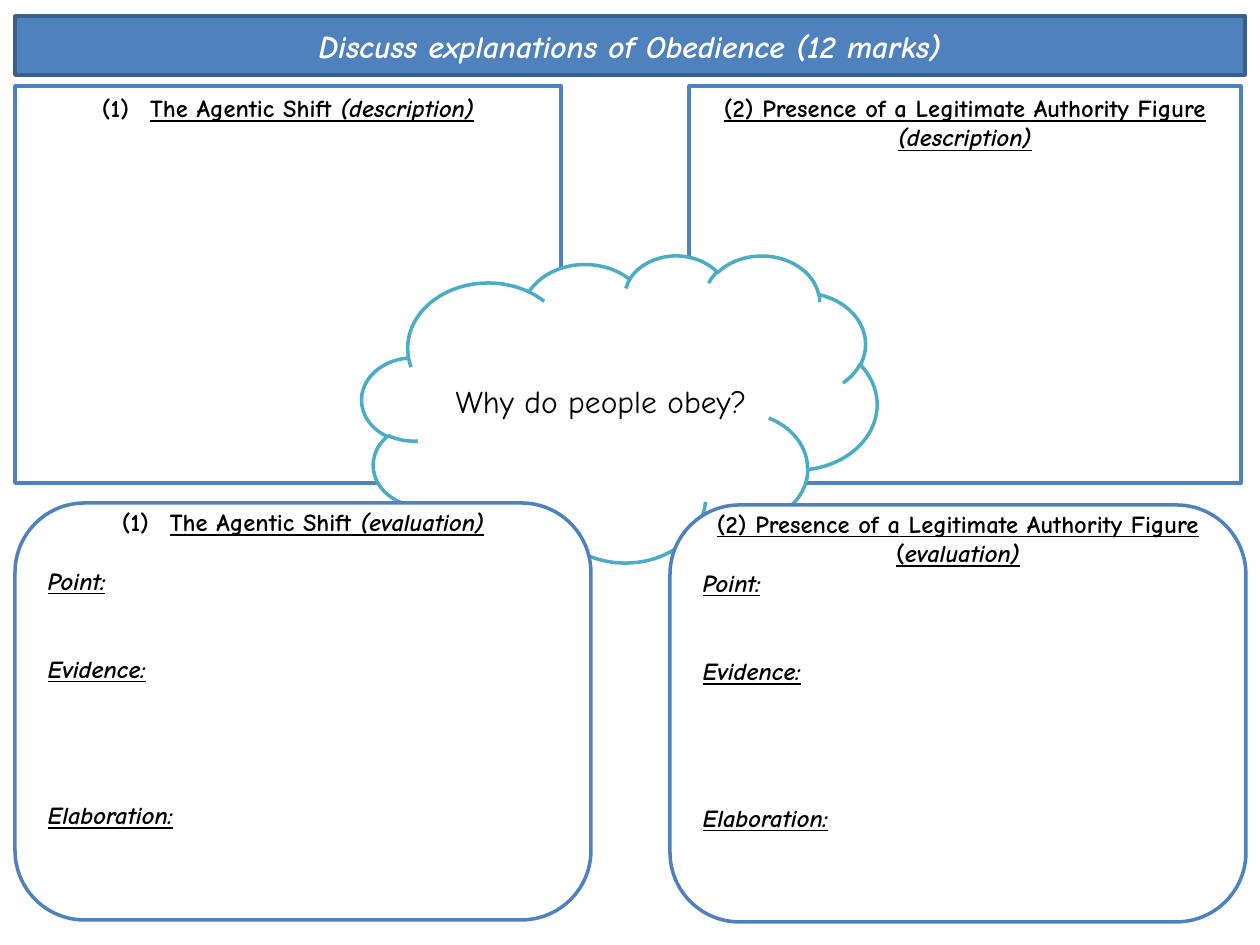
from dataclasses import dataclass

from lxml.etree import SubElement
from pptx import Presentation
from pptx.dml.color import RGBColor
from pptx.enum.shapes import MSO_SHAPE
from pptx.enum.text import MSO_ANCHOR, MSO_AUTO_SIZE, PP_ALIGN
from pptx.oxml.ns import qn
from pptx.util import Emu, Pt

EMU_PER_PX = 914400 / 126
FONT = "Comic Neue"
COLORS = {
    "blue": "4F81BD",
    "navy": "3A5F8C",
    "teal": "4BACC6",
    "white": "FFFFFF",
    "black": "000000",
}


@dataclass(frozen=True)
class Panel:
    left: int
    top: int
    width: int
    height: int
    heading: str
    ending: str
    numbered: bool = False
    prompt_gap: int | None = None


PANELS = [
    Panel(15, 86, 546, 397, "The Agentic Shift ", "(description)", numbered=True),
    Panel(689, 86, 552, 397, "(2) Presence of a Legitimate Authority Figure", " (description)"),
]
EVALUATIONS = [
    Panel(15, 503, 576, 417, "The Agentic Shift ", "(evaluation)", numbered=True, prompt_gap=29),
    Panel(670, 505, 576, 417, "(2) Presence of a Legitimate Authority Figure (", "evaluation)", prompt_gap=0),
]


def px(n: int) -> Emu:
    return Emu(round(n * EMU_PER_PX))


def rgb(name: str) -> RGBColor:
    return RGBColor.from_string(COLORS[name])


def add_run(p, text: str, *, size=14, color="black", bold=False, italic=False, underline=False):
    r = p.add_run()
    r.text = text
    f = r.font
    f.name, f.size = FONT, Pt(size)
    f.bold, f.italic, f.underline = bold, italic, underline
    f.color.rgb = rgb(color)


def style(sp, fill: str, line: str):
    sp.fill.solid()
    sp.fill.fore_color.rgb = rgb(fill)
    sp.line.color.rgb = rgb(line)
    sp.line.width = Pt(2)
    tf = sp.text_frame
    tf.word_wrap = True
    tf.auto_size = MSO_AUTO_SIZE.NONE
    tf.vertical_anchor = MSO_ANCHOR.MIDDLE
    tf.paragraphs[0].alignment = PP_ALIGN.CENTER
    return tf


def add_box(s, kind: MSO_SHAPE, left: int, top: int, width: int, height: int, line="blue"):
    sp = s.shapes.add_shape(kind, px(left), px(top), px(width), px(height))
    sp.shadow.inherit = False
    return style(sp, "white", line)


def number(p):
    pPr = p._p.get_or_add_pPr()
    pPr.set("marL", str(px(48)))
    pPr.set("indent", str(-px(48)))
    SubElement(pPr, qn("a:buFont"), typeface="+mj-lt")
    SubElement(pPr, qn("a:buAutoNum"), type="arabicParenBoth")


def add_panel(s, panel: Panel, kind: MSO_SHAPE):
    tf = add_box(s, kind, panel.left, panel.top, panel.width, panel.height)
    p = tf.paragraphs[0]
    if panel.numbered:
        number(p)
    add_run(p, panel.heading, bold=True, underline=True)
    add_run(p, panel.ending, bold=True, italic=True, underline=True)
    if panel.prompt_gap is None:
        tf.vertical_anchor = MSO_ANCHOR.TOP
        tf.margin_top = px(7)
        return
    tf.margin_top, tf.margin_bottom = px(0), px(86)
    prompts = [("Point:", panel.prompt_gap), ("Evidence:", 59), ("Elaboration:", 117)]
    for text, gap in prompts:
        p = tf.add_paragraph()
        p.alignment = PP_ALIGN.LEFT
        p.space_before = px(gap)
        add_run(p, text, bold=True, italic=True, underline=True)


def main():
    prs = Presentation()
    prs.slide_width, prs.slide_height = px(1260), px(945)
    s = prs.slides.add_slide(prs.slide_layouts[5])

    title = s.shapes.title
    title.left, title.top, title.width, title.height = px(15), px(16), px(1230), px(59)
    tf = style(title, "blue", "navy")
    add_run(tf.paragraphs[0], "Discuss explanations of Obedience (12 marks)",
            size=18, color="white", bold=True, italic=True)

    for panel in PANELS:
        add_panel(s, panel, MSO_SHAPE.RECTANGLE)

    tf = add_box(s, MSO_SHAPE.CLOUD, 362, 255, 515, 307, line="teal")
    add_run(tf.paragraphs[0], "Why do people obey?", size=18)

    for panel in EVALUATIONS:
        add_panel(s, panel, MSO_SHAPE.ROUNDED_RECTANGLE)

    prs.save("out.pptx")


if __name__ == "__main__":
    main()
